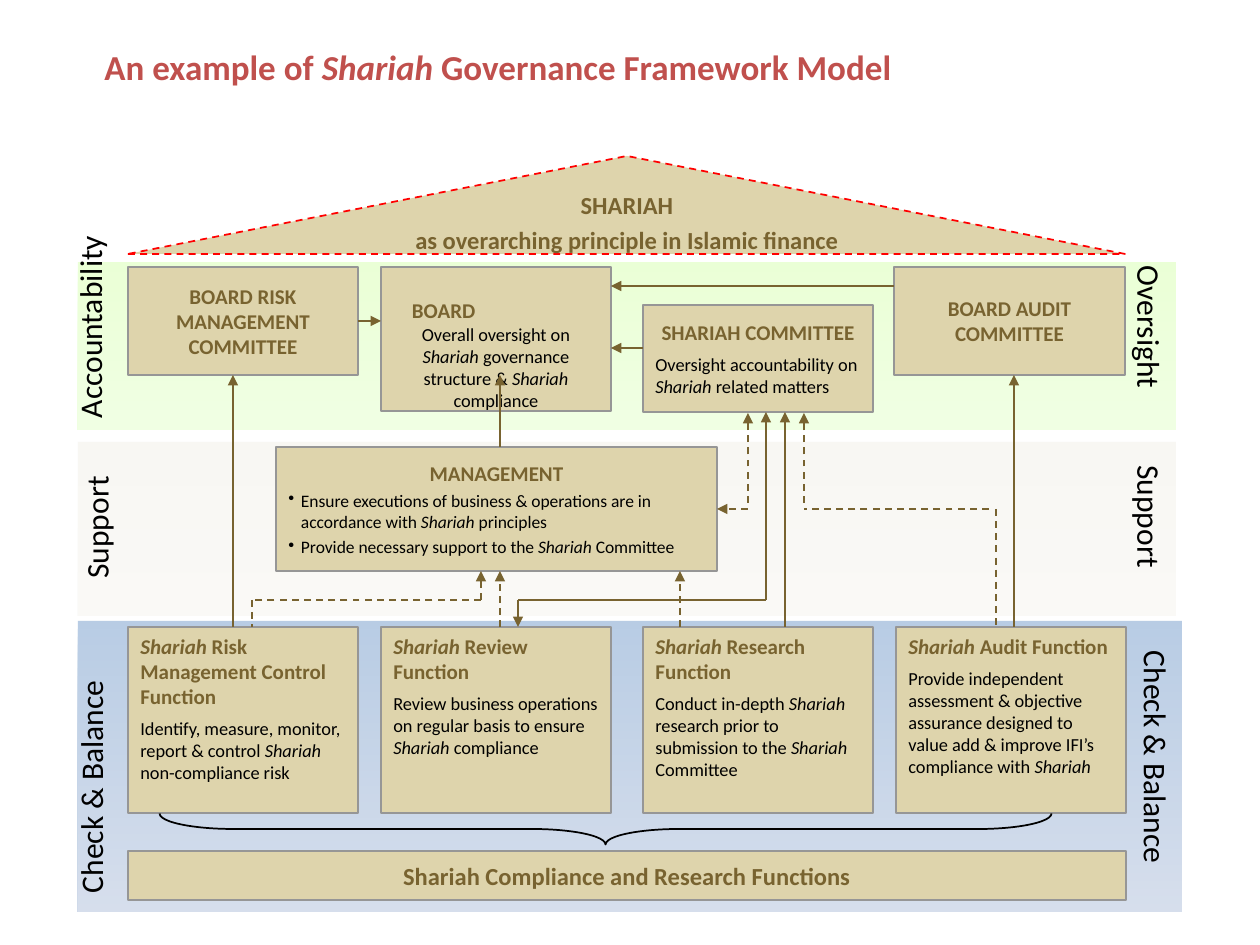
from lxml import etree
from pptx import Presentation
from pptx import util as u
from pptx.dml.color import RGBColor
from pptx.enum import dml, shapes, text
from pptx.oxml.ns import qn

COLOURS = {"sand": "DED4AC", "brown": "786330", "grey": "969696", "black": "000000",
           "title": "C0504D", "red": "FF0000"}
# Text styles: size, colour, bold, space before, line spacing
STYLES = {"title": (20, "title", True, 0, 1), "roof": (14, "brown", True, 0, 1.2),
          "base": (14, "brown", True, 0, 1), "head": (12, "brown", True, 0, 1),
          "body": (10.5, "black", False, 5, 1), "tight": (10.5, "black", False, 0, 1),
          "bullet": (10, "black", False, 2.5, 1), "side": (18, "black", False, 0, 1)}
LEFT, CENTRE = text.PP_ALIGN.LEFT, text.PP_ALIGN.CENTER
TOP, MIDDLE = text.MSO_ANCHOR.TOP, text.MSO_ANCHOR.MIDDLE
RECT = shapes.MSO_SHAPE.RECTANGLE


def px(*lengths):
    return [u.Emu(round(length * 914400 / 126)) for length in lengths]


def write(frame, paragraphs):
    """Fill a frame with (style, align, words); *stars* mark italics."""
    for index, (style, align, words) in enumerate(paragraphs):
        size, colour, bold, before, spacing = STYLES[style]
        para = frame.add_paragraph() if index else frame.paragraphs[0]
        para.alignment, para.line_spacing = align, spacing
        para.space_before = u.Pt(before)
        if style == "bullet":
            props = para._p.get_or_add_pPr()
            props.set("marL", "91440")
            props.set("indent", "-91440")
            etree.SubElement(props, qn("a:buChar")).set("char", "•")
        for part, piece in enumerate(words.split("*")):
            if piece:
                span = para.add_run()
                span.text = piece
                span.font.name, span.font.size = "Calibri", u.Pt(size)
                span.font.bold, span.font.italic = bold, part % 2 == 1
                span.font.color.rgb = RGBColor.from_string(COLOURS[colour])


deck = Presentation()
deck.slide_width, deck.slide_height = px(1260, 945)
page = deck.slides.add_slide(deck.slide_layouts[6])

# Background bands
for top, width, height, stops in [(442, 1098, 174, ("EEECE1", "F3F1E9")),
                                  (262, 1098, 168, ("CCFF99", "DBFFBB")),
                                  (621, 1104, 291, ("4F81BD", "9AAED1"))]:
    band = page.shapes.add_shape(RECT, *px(78, top, width, height))
    band.shadow.inherit = False
    band.line.fill.background()
    band.fill.gradient()
    band.fill.gradient_angle = 270
    for stop, position, colour in zip(band.fill.gradient_stops, (0, 1), stops):
        stop.position = position
        stop.color.rgb = RGBColor.from_string(colour)
    for tint in band._element.spPr.iter(qn("a:srgbClr")):
        etree.SubElement(tint, qn("a:alpha")).set("val", "40000")

# Roof
builder = page.shapes.build_freeform(*px(128, 254), scale=1.0)
builder.add_line_segments([px(1125, 254), px(627, 156)], close=True)
roof = builder.convert_to_shape()
roof.shadow.inherit = False
roof.fill.solid()
roof.fill.fore_color.rgb = RGBColor.from_string(COLOURS["sand"])
roof.line.color.rgb = RGBColor.from_string(COLOURS["red"])
roof.line.width, roof.line.dash_style = u.Pt(1), dml.MSO_LINE.DASH

# Roof text and title
roof_box = page.shapes.add_textbox(*px(302, 180, 650, 78))
frame = roof_box.text_frame
frame.word_wrap = True
frame.margin_left = frame.margin_right = px(8)[0]
frame.margin_top = frame.margin_bottom = px(4)[0]
write(frame, [("roof", CENTRE, "SHARIAH"),
              ("roof", CENTRE, "as overarching principle in Islamic finance")])
title = page.shapes.add_textbox(*px(92, 39, 1079, 55))
title.text_frame.word_wrap = True
write(title.text_frame, [("title", LEFT, "An example of *Shariah *Governance Framework Model")])

# Committees, management and the base bar
boxes = [
    ("risk", 128, 267, 230, 108, MIDDLE,
     [("head", CENTRE, "BOARD RISK MANAGEMENT COMMITTEE")]),
    ("board", 381, 267, 230, 144, TOP,
     [("head", LEFT, "BOARD"),
      ("tight", CENTRE, "Overall oversight on *Shariah* governance structure & *Shariah* compliance")]),
    ("shariah", 643, 305, 230, 107, MIDDLE,
     [("head", CENTRE, "SHARIAH COMMITTEE"),
      ("body", LEFT, "Oversight accountability on *Shariah* related matters")]),
    ("audit", 894, 267, 231, 108, MIDDLE, [("head", CENTRE, "BOARD AUDIT COMMITTEE")]),
    ("management", 276, 447, 441, 124, MIDDLE,
     [("head", CENTRE, "MANAGEMENT"),
      ("bullet", LEFT, "Ensure executions of business & operations are in accordance with "
                       "*Shariah* principles"),
      ("bullet", LEFT, "Provide necessary support to the *Shariah *Committee")]),
    ("base", 128, 851, 998, 49, MIDDLE,
     [("base", CENTRE, "Shariah Compliance and Research Functions")]),
]
# Four functions in a row
for left, heading, detail in [
        (128, "*Shariah* Risk Management Control Function",
         "Identify, measure, monitor, report & control *Shariah *non-compliance risk"),
        (381, "*Shariah* Review Function",
         "Review business operations on regular basis to ensure *Shariah *compliance"),
        (643, "*Shariah* Research Function",
         "Conduct in-depth *Shariah* research prior to submission to the *Shariah *Committee"),
        (896, "*Shariah *Audit Function",
         "Provide independent assessment & objective assurance designed to value add & "
         "improve IFI’s compliance with *Shariah*")]:
    boxes.append((heading, left, 627, 230, 186, TOP,
                  [("head", LEFT, heading), ("body", LEFT, detail)]))

placed = {}
for name, left, top, width, height, anchor, paragraphs in boxes:
    box = placed[name] = page.shapes.add_shape(RECT, *px(left, top, width, height))
    box.shadow.inherit = False
    box.fill.solid()
    box.fill.fore_color.rgb = RGBColor.from_string(COLOURS["sand"])
    box.line.color.rgb = RGBColor.from_string(COLOURS["grey"])
    box.line.width = u.Pt(1)
    box.text_frame.word_wrap = True
    box.text_frame.vertical_anchor = anchor
    write(box.text_frame, paragraphs)
# The board's text sits low and narrow in its box
frame = placed["board"].text_frame
frame.margin_left = frame.margin_right = frame.margin_top = px(31)[0]

# Reporting lines: x1, y1, x2, y2, dashed, arrow at the end
for index, (x1, y1, x2, y2, dashed, arrow) in enumerate([
        (358, 321, 381, 321, False, True),
        (643, 348, 611, 348, False, True),
        (894, 286, 611, 286, False, True),
        (500, 447, 500, 375, False, True),
        (233, 627, 233, 375, False, True),
        (785, 627, 785, 412, False, True),
        (1014, 627, 1014, 375, False, True),
        (500, 627, 500, 571, True, True),
        (481, 600, 481, 571, True, True),
        (481, 600, 252, 600, True, False),
        (252, 600, 252, 627, True, False),
        (766, 600, 766, 412, False, True),
        (766, 600, 518, 600, False, False),
        (518, 600, 518, 627, False, True),
        (680, 627, 680, 571, True, True),
        (748, 503, 748, 413, True, True),
        (748, 509, 717, 509, True, True),
        (804, 503, 804, 413, True, True),
        (989, 509, 804, 509, True, False),
        (996, 509, 996, 627, True, False)]):
    link = page.shapes.add_connector(shapes.MSO_CONNECTOR.STRAIGHT, *px(x1, y1, x2, y2))
    if index == 0:
        link.begin_connect(placed["risk"], 3)
    link.line.color.rgb = RGBColor.from_string(COLOURS["brown"])
    link.line.width = u.Pt(1)
    if dashed:
        link.line.dash_style = dml.MSO_LINE.DASH
    if arrow:
        etree.SubElement(link.line._get_or_add_ln(), qn("a:tailEnd")).set("type", "triangle")
    etree.SubElement(link._element.spPr, qn("a:effectLst"))

# Brace under the functions
brace = page.shapes.add_shape(shapes.MSO_SHAPE.RIGHT_BRACE, *px(590, 383, 31, 892))
brace.rotation = 90
brace.adjustments[0], brace.adjustments[1] = 2.38, 0.5
brace.shadow.inherit = False
brace.fill.background()
brace.line.color.rgb = RGBColor.from_string(COLOURS["black"])
brace.line.width = u.Pt(1)

# Side labels
for left, top, width, turn, align, words in [
        (-20, 302, 219, 270, CENTRE, "Accountability"),
        (1070, 302, 160, 90, CENTRE, "Oversight"),
        (28, 498, 136, 270, LEFT, "Support"),
        (1082, 496, 136, 90, LEFT, "Support"),
        (-43, 747, 267, 270, LEFT, "Check & Balance"),
        (1023, 747, 267, 90, LEFT, "Check & Balance")]:
    label = page.shapes.add_textbox(*px(left, top, width, 50))
    label.rotation = turn
    label.text_frame.word_wrap = False
    label.text_frame.auto_size = text.MSO_AUTO_SIZE.SHAPE_TO_FIT_TEXT
    write(label.text_frame, [("side", align, words)])

deck.save("out.pptx")
